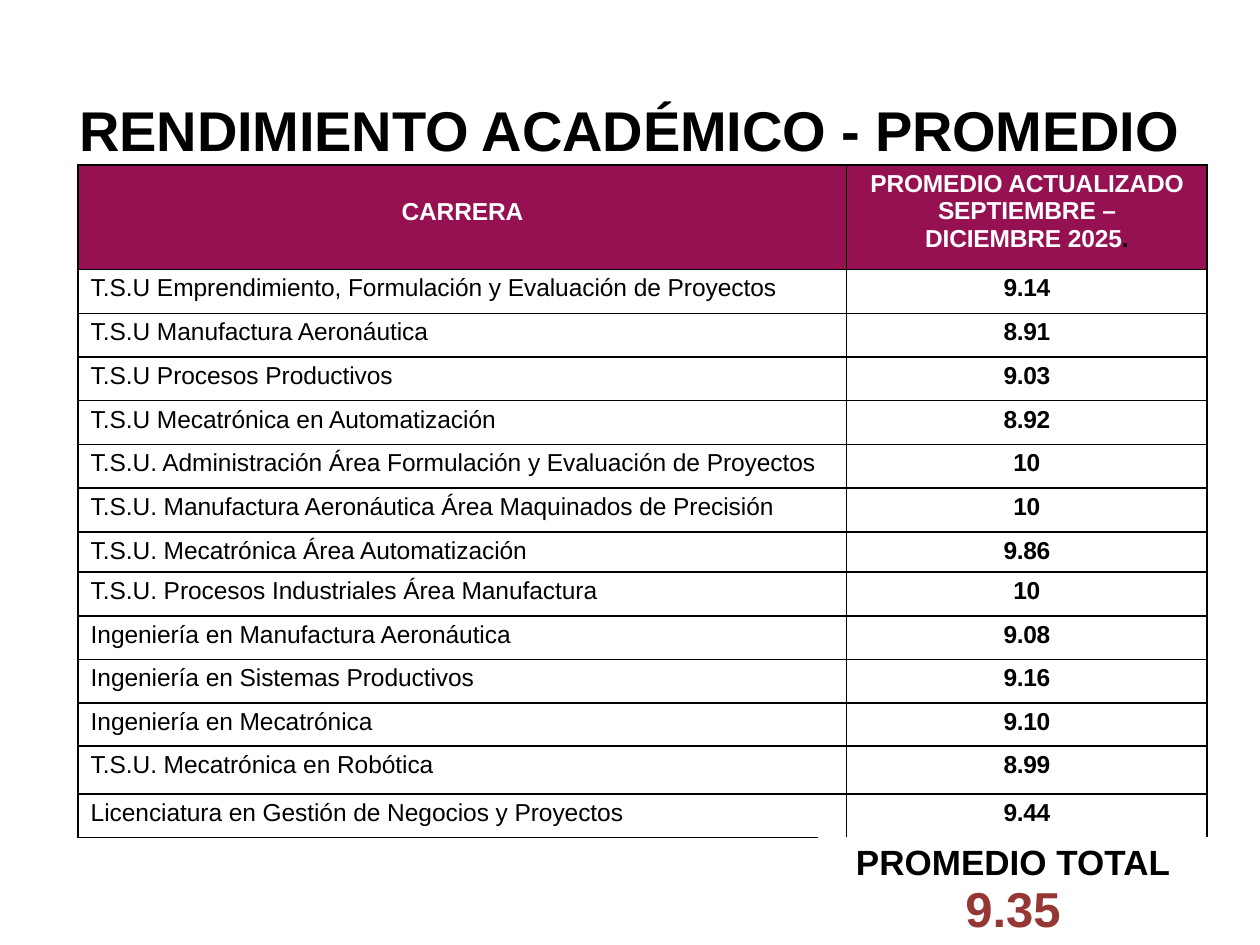
from dataclasses import dataclass

from pptx import Presentation
from pptx.dml.color import RGBColor as RGB
from pptx.enum.text import MSO_ANCHOR as ANCHOR, PP_ALIGN as ALIGN
from pptx.oxml import parse_xml
from pptx.oxml.ns import nsdecls
from pptx.util import Inches, Pt


@dataclass(frozen=True)
class Theme:
    font: str = "Arial"
    black: str = "000000"
    white: str = "FFFFFF"
    maroon: str = "951151"
    red: str = "953735"
    title: int = 32
    body: int = 14
    total: int = 20
    score: int = 28


T = Theme()
GRADES = [
    ("T.S.U Emprendimiento, Formulación y Evaluación de Proyectos", "9.14"),
    ("T.S.U Manufactura Aeronáutica", "8.91"),
    ("T.S.U Procesos Productivos", "9.03"),
    ("T.S.U Mecatrónica en Automatización", "8.92"),
    ("T.S.U. Administración Área Formulación y Evaluación de Proyectos", "10"),
    ("T.S.U. Manufactura Aeronáutica Área Maquinados de Precisión", "10"),
    ("T.S.U. Mecatrónica Área Automatización", "9.86"),
    ("T.S.U. Procesos Industriales Área Manufactura", "10"),
    ("Ingeniería en Manufactura Aeronáutica", "9.08"),
    ("Ingeniería en Sistemas Productivos", "9.16"),
    ("Ingeniería en Mecatrónica", "9.10"),
    ("T.S.U. Mecatrónica en Robótica", "8.99"),
    ("Licenciatura en Gestión de Negocios y Proyectos", "9.44"),
]
# Row heights that differ from the regular one
SPECIAL_ROWS = {0: 0.83, 7: 0.32, 11: 0.34, 12: 0.38}


def set_attrs(obj, **values):
    for name, value in values.items():
        setattr(obj, name, value)


def add_run(p, text, size, color=T.black, bold=True, spacing=0):
    r = p.add_run()
    r.text = text
    set_attrs(r.font, name=T.font, size=Pt(size), bold=bold)
    r.font.color.rgb = RGB.from_string(color)
    if spacing:
        r.font._element.set("spc", str(spacing))


def set_borders(cell, color=T.black, width=Pt(1)):
    tc_pr = cell._tc.get_or_add_tcPr()
    for i, side in enumerate(("lnL", "lnR", "lnT", "lnB")):
        tc_pr.insert(i, parse_xml(
            f'<a:{side} {nsdecls("a")} w="{width}"><a:solidFill>'
            f'<a:srgbClr val="{color}"/></a:solidFill></a:{side}>'))


def add_table(slide, box, rows, cols):
    table = slide.shapes.add_table(rows, cols, *map(Inches, box)).table
    set_attrs(table, first_row=False, horz_banding=False)
    for cell in table.iter_cells():
        cell.fill.background()
    return table


def add_title(slide, box):
    sp = slide.shapes.title
    sp.left, sp.top, sp.width, sp.height = map(Inches, box)
    tf = sp.text_frame
    set_attrs(tf, margin_left=0, margin_right=0, margin_top=Inches(0.01),
              margin_bottom=0, word_wrap=True, vertical_anchor=ANCHOR.BOTTOM)
    p = tf.paragraphs[0]
    p.alignment = ALIGN.LEFT
    add_run(p, "RENDIMIENTO ACADÉMICO - PROMEDIO", T.title, spacing=-10)


def add_grades(slide, box):
    count = len(GRADES) + 1
    table = add_table(slide, box, count, 2)
    for col, width in zip(table.columns, (6.1, 2.86)):
        col.width = Inches(width)
    regular = (box[3] - sum(SPECIAL_ROWS.values())) / (count - len(SPECIAL_ROWS))
    for i, row in enumerate(table.rows):
        row.height = Inches(SPECIAL_ROWS.get(i, regular))

    for cell in table.iter_cells():
        set_attrs(cell, margin_left=0, margin_right=0,
                  margin_top=Inches(0.04), margin_bottom=0)
        set_borders(cell)

    # Header row
    career, average = table.cell(0, 0), table.cell(0, 1)
    set_attrs(career, vertical_anchor=ANCHOR.MIDDLE, margin_top=0,
              margin_bottom=Inches(0.08))
    set_attrs(average, margin_left=Inches(0.16), margin_right=Inches(0.16))
    for cell, text in ((career, "CARRERA"),
                       (average, "PROMEDIO ACTUALIZADO SEPTIEMBRE – DICIEMBRE 2025")):
        cell.fill.solid()
        cell.fill.fore_color.rgb = RGB.from_string(T.maroon)
        p = cell.text_frame.paragraphs[0]
        p.alignment = ALIGN.CENTER
        add_run(p, text, T.body, T.white, spacing=-10)
    add_run(average.text_frame.paragraphs[0], ".", T.body)

    # One row for each career
    for i, (name, grade) in enumerate(GRADES, 1):
        cell = table.cell(i, 0)
        cell.margin_left = Inches(0.1)
        add_run(cell.text_frame.paragraphs[0], name, T.body, bold=False, spacing=-5)
        p = table.cell(i, 1).text_frame.paragraphs[0]
        p.alignment = ALIGN.CENTER
        add_run(p, grade, T.body, spacing=-20)


def add_total(slide, box):
    tf = add_table(slide, box, 1, 1).cell(0, 0).text_frame
    lines = (("PROMEDIO TOTAL", T.total, T.black), ("9.35", T.score, T.red))
    for i, line in enumerate(lines):
        p = tf.add_paragraph() if i else tf.paragraphs[0]
        p.alignment = ALIGN.CENTER
        add_run(p, *line)


def main():
    prs = Presentation()
    set_attrs(prs, slide_width=Inches(10), slide_height=Inches(7.5))
    slide = prs.slides.add_slide(prs.slide_layouts[5])
    add_title(slide, (0.63, 0.74, 8.96, 0.55))
    add_grades(slide, (0.62, 1.31, 8.96, 5.34))
    add_total(slide, (6.5, 6.65, 3.08, 0.42))
    prs.save("out.pptx")


if __name__ == "__main__":
    main()
